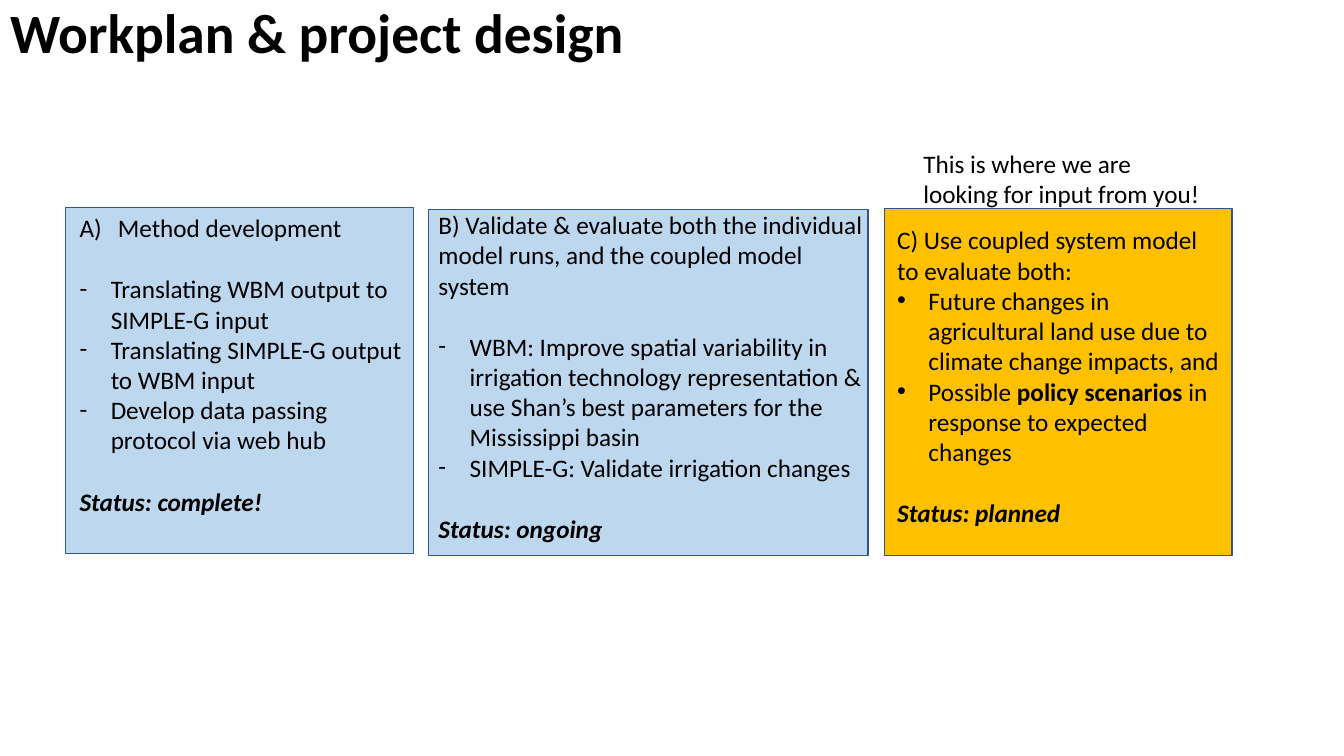
import pptx
import pptx.dml.color
import pptx.enum.shapes
import pptx.enum.text
import pptx.oxml
import pptx.oxml.ns
import pptx.util

Inches = pptx.util.Inches
Pt = pptx.util.Pt
BLUE = pptx.dml.color.RGBColor(0xBD, 0xD7, 0xEE)
GOLD = pptx.dml.color.RGBColor(0xFF, 0xC0, 0x00)
OUTLINE = pptx.dml.color.RGBColor(0x32, 0x54, 0x91)
BLACK = pptx.dml.color.RGBColor(0, 0, 0)
FONT = "Calibri"
BODY_SIZE = Pt(18)
LINE_GAP = Pt(22)
NUMBERED = "A)"


def add_bullet(para, mark):
    """Give the paragraph a hanging indent and a bullet or letter."""
    indent = Inches(0.38 if mark == NUMBERED else 0.31)
    properties = para._p.get_or_add_pPr()
    properties.set("marL", str(indent))
    properties.set("indent", str(-indent))
    namespace = pptx.oxml.ns.nsdecls("a")
    if mark == NUMBERED:
        tags = ['<a:buAutoNum {} type="alphaUcParenR"/>']
    else:
        face = "Arial" if mark == "•" else FONT
        tags = ['<a:buFont {} typeface="' + face + '"/>',
                '<a:buChar {} char="' + mark + '"/>']
    for tag in tags:
        properties.append(pptx.oxml.parse_xml(tag.format(namespace)))


def add_text(page, bounds, items):
    """Add a text box; each item is (bullet, gap above, [(text, bold, italic)])."""
    box = page.shapes.add_textbox(*map(Inches, bounds))
    frame = box.text_frame
    frame.word_wrap = True
    for index, (mark, gap, spans) in enumerate(items):
        para = frame.add_paragraph() if index else frame.paragraphs[0]
        if gap:
            para.space_before = LINE_GAP
        if mark:
            add_bullet(para, mark)
        para.font.name = FONT
        para.font.size = BODY_SIZE
        para.font.color.rgb = BLACK
        for text, bold, italic in spans:
            span = para.add_run()
            span.text = text
            if bold:
                span.font.bold = True
            if italic:
                span.font.italic = True


deck = pptx.Presentation()
deck.slide_width = Inches(13.33)
deck.slide_height = Inches(7.5)
page = deck.slides.add_slide(deck.slide_layouts[5])

title = page.shapes.title
title.left, title.top, title.width, title.height = map(Inches, (0, 0, 11.5, 0.71))
title.text_frame.text = "Workplan & project design"
title.text_frame.vertical_anchor = pptx.enum.text.MSO_ANCHOR.MIDDLE
heading = title.text_frame.paragraphs[0]
heading.alignment = pptx.enum.text.PP_ALIGN.LEFT
heading.line_spacing = 0.9
heading.font.name = FONT
heading.font.size = Pt(39.6)
heading.font.bold = True
heading.font.color.rgb = BLACK

# Panel bounds, fill, text bounds, heading, its mark, bullet, gap before bullets, bullets, status
panels = [
    ((0.65, 2.06, 3.45, 3.43), BLUE, (0.69, 2.06, 3.41, 3.13),
     "Method development", NUMBERED, "-", True,
     [[("Translating WBM output to SIMPLE-G input", False, False)],
      [("Translating SIMPLE-G output to WBM input", False, False)],
      [("Develop data passing protocol via web hub", False, False)]],
     "Status: complete!"),
    ((4.25, 2.08, 4.36, 3.43), BLUE, (4.25, 2.03, 4.52, 3.43),
     "B) Validate & evaluate both the individual model runs, and the coupled model system",
     None, "-", True,
     [[("WBM: Improve spatial variability in irrigation technology representation & "
        "use Shan’s best parameters for the Mississippi basin", False, False)],
      [("SIMPLE-G: Validate irrigation changes", False, False)]],
     "Status: ongoing"),
    ((8.77, 2.07, 3.45, 3.44), GOLD, (8.8, 2.18, 3.41, 3.13),
     "C) Use coupled system model to evaluate both:", None, "•", False,
     [[("Future changes in agricultural land use due to climate change impacts, and",
        False, False)],
      [("Possible ", False, False), ("policy scenarios ", True, False),
       ("in response to expected changes", False, False)]],
     "Status: planned"),
]

for bounds, fill, text_bounds, lead, lead_mark, mark, gap, bullets, status in panels:
    panel = page.shapes.add_shape(pptx.enum.shapes.MSO_SHAPE.RECTANGLE, *map(Inches, bounds))
    panel.shadow.inherit = False
    panel.fill.solid()
    panel.fill.fore_color.rgb = fill
    panel.line.color.rgb = OUTLINE
    panel.line.width = Pt(1)
    items = [(lead_mark, False, [(lead, False, False)])]
    items += [(mark, gap and index == 0, spans) for index, spans in enumerate(bullets)]
    items.append((None, True, [(status, True, True)]))
    add_text(page, text_bounds, items)

add_text(page, (9.06, 1.42, 2.95, 0.71),
         [(None, False, [("This is where we are looking for input from you!", False, False)])])

deck.save("out.pptx")
